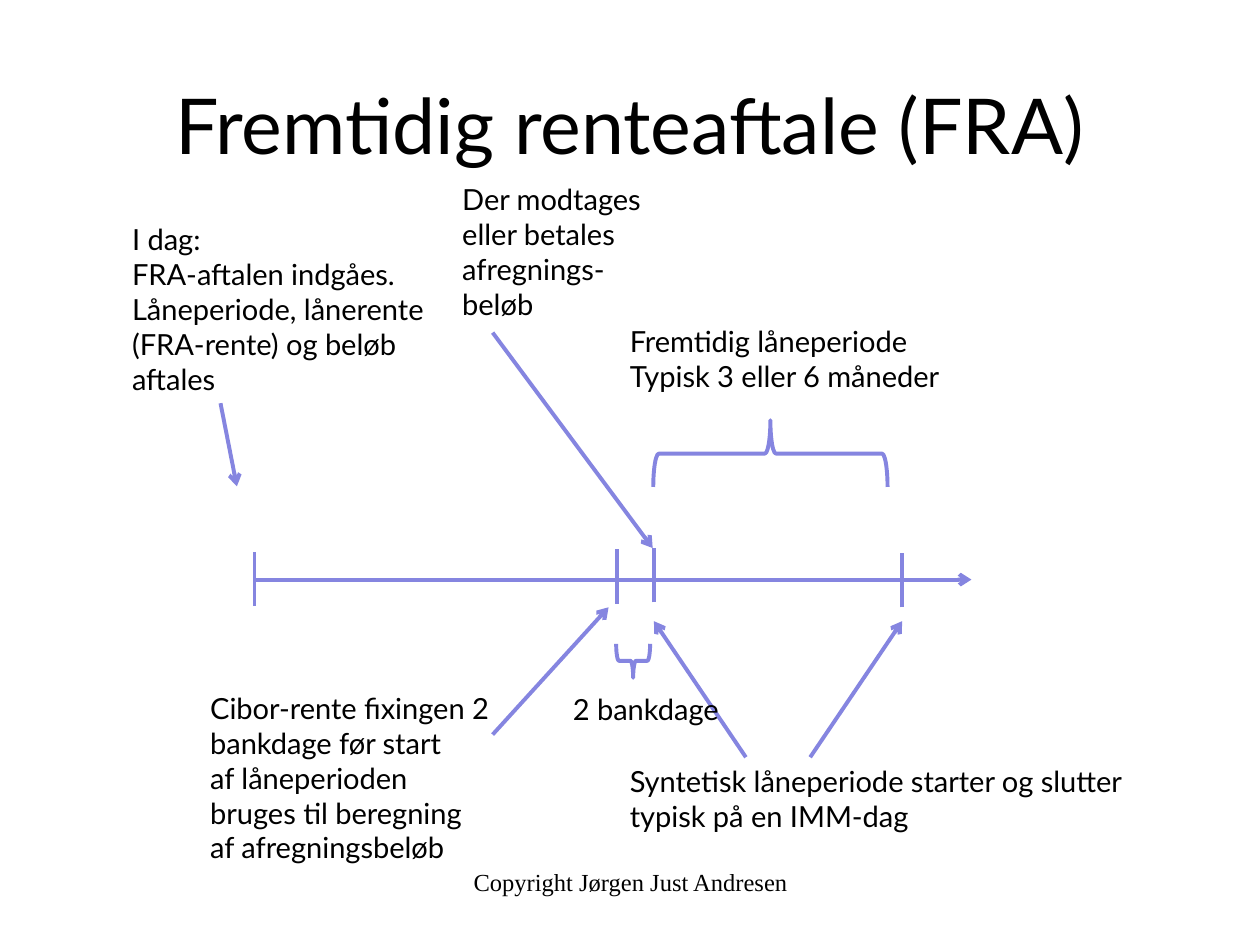
from lxml.etree import SubElement
from pptx import Presentation
from pptx.dml.color import RGBColor
from pptx.enum.shapes import MSO_CONNECTOR, MSO_SHAPE
from pptx.enum.text import MSO_ANCHOR, PP_ALIGN
from pptx.oxml.ns import qn
from pptx.util import Inches, Pt

BLUE = "8585E0"
BLACK = "000000"


def color(code):
    return RGBColor.from_string(code)


def add_text(slide, box, text, size=16.6, font="Lato", wrap=False,
             center=False, anchor=MSO_ANCHOR.TOP):
    """Add a text box with one paragraph for each line of text."""
    frame = slide.shapes.add_textbox(*map(Inches, box)).text_frame
    frame.word_wrap = wrap
    frame.vertical_anchor = anchor
    frame.text = text
    for para in frame.paragraphs:
        para.alignment = PP_ALIGN.CENTER if center else PP_ALIGN.LEFT
        para.font.size = Pt(size)
        para.font.name = font
        para.font.color.rgb = color(BLACK)


def style_line(shape):
    shape.line.color.rgb = color(BLUE)
    shape.line.width = Pt(2.25)


def add_line(slide, start, end, arrow=False):
    line = slide.shapes.add_connector(
        MSO_CONNECTOR.STRAIGHT, *map(Inches, (*start, *end)))
    style_line(line)
    if arrow:
        SubElement(line.line._get_or_add_ln(), qn("a:tailEnd"), type="arrow")
    SubElement(line._element.spPr, qn("a:effectLst"))


def add_brace(slide, box, turn):
    brace = slide.shapes.add_shape(MSO_SHAPE.RIGHT_BRACE, *map(Inches, box))
    brace.rotation = turn
    brace.shadow.inherit = False
    brace.fill.background()
    style_line(brace)


def add_axis(slide):
    add_line(slide, (2.01, 4.6), (7.71, 4.6), arrow=True)
    for x, top in ((2.02, 4.38), (4.9, 4.36), (5.19, 4.35), (7.16, 4.39)):
        add_line(slide, (x, top + 0.43), (x, top))
    add_brace(slide, (5.85, 2.67, 0.53, 1.86), 270)
    add_brace(slide, (4.89, 5.11, 0.27, 0.27), 90)


def add_arrows(slide):
    for start, end in (
        ((1.75, 3.2), (1.88, 3.86)),
        ((3.91, 2.64), (5.18, 4.35)),
        ((3.91, 5.83), (4.83, 4.82)),
        ((5.92, 6.01), (5.19, 4.93)),
        ((6.43, 6.01), (7.16, 4.93)),
    ):
        add_line(slide, start, end, arrow=True)


def add_notes(slide):
    """Add the texts that explain the points on the time axis."""
    add_text(slide, (4.9, 2.52, 2.76, 0.66),
             "Fremtidig låneperiode\nTypisk 3 eller 6 måneder")
    add_text(slide, (4.9, 6.01, 4.33, 0.66),
             "Syntetisk låneperiode starter og slutter\n"
             "typisk på en IMM-dag")
    add_text(slide, (0.95, 1.71, 2.74, 1.5),
             "I dag:\nFRA-aftalen indgåes.\nLåneperiode, lånerente\n"
             "(FRA-rente) og beløb\naftales")
    add_text(slide, (1.57, 5.43, 2.43, 1.5),
             "Cibor-rente fixingen 2 bankdage før start\naf låneperioden\n"
             "bruges til beregning af afregningsbeløb", wrap=True)
    add_text(slide, (3.57, 1.39, 1.62, 1.5),
             "Der modtages eller betales afregnings-beløb", wrap=True)
    add_text(slide, (4.43, 5.44, 1.39, 0.38), "2 bankdage", center=True)


def main():
    deck = Presentation()
    deck.slide_width, deck.slide_height = Inches(10), Inches(7.5)
    slide = deck.slides.add_slide(deck.slide_layouts[6])
    add_text(slide, (0.75, 0.36, 8.5, 1.25), "Fremtidig renteaftale (FRA)",
             size=44, wrap=True, center=True, anchor=MSO_ANCHOR.MIDDLE)
    add_axis(slide)
    add_arrows(slide)
    add_notes(slide)
    add_text(slide, (3.42, 6.83, 3.17, 0.5), "Copyright Jørgen Just Andresen",
             size=14, font="Times New Roman", wrap=True, center=True)
    deck.save("out.pptx")


if __name__ == "__main__":
    main()
